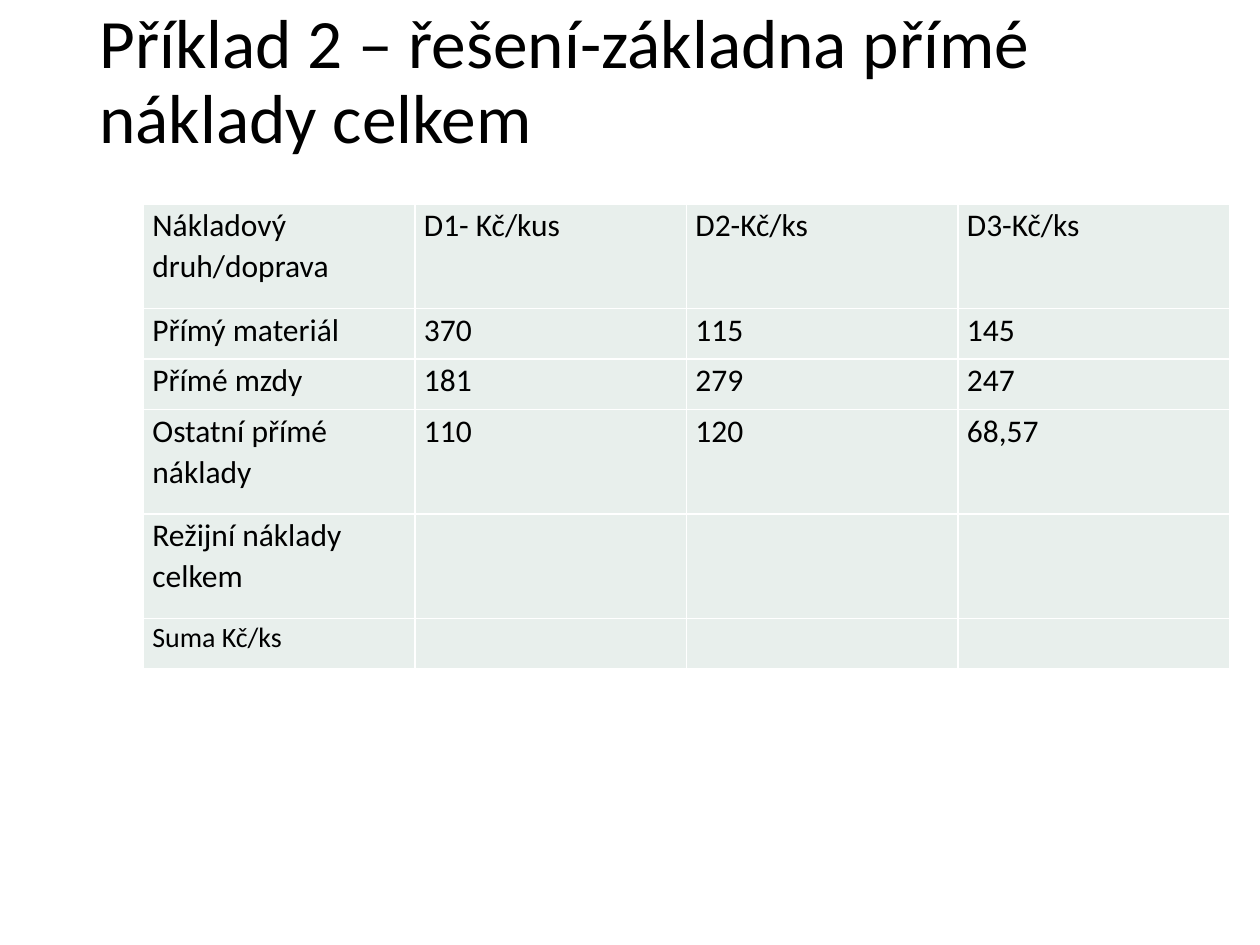
import pptx
import pptx.util
import pptx.dml.color
import pptx.enum.text
import pptx.oxml.ns
import lxml.etree
from pptx.util import Inches

theme = {
    "font": "Calibri",
    "ink": pptx.dml.color.RGBColor.from_string("000000"),
    "cell": pptx.dml.color.RGBColor.from_string("E8EFEC"),
    "border": "FFFFFF",
    "title_size": pptx.util.Pt(39.6),
    "body_size": pptx.util.Pt(18),
    "total_size": pptx.util.Pt(16),
}


def write(paragraph, text, size, spacing):
    paragraph.line_spacing = spacing
    run = paragraph.add_run()
    run.text = text
    run.font.name = theme["font"]
    run.font.size = size
    run.font.bold = False
    run.font.color.rgb = theme["ink"]


def add_borders(cell):
    properties = cell._tc.get_or_add_tcPr()
    for position, side in enumerate(("a:lnL", "a:lnR", "a:lnT", "a:lnB")):
        line = lxml.etree.Element(pptx.oxml.ns.qn(side), w=str(pptx.util.Pt(1)))
        fill = lxml.etree.SubElement(line, pptx.oxml.ns.qn("a:solidFill"))
        lxml.etree.SubElement(fill, pptx.oxml.ns.qn("a:srgbClr"), val=theme["border"])
        properties.insert(position, line)


deck = pptx.Presentation()
deck.slide_width = Inches(10)
deck.slide_height = Inches(7.5)
slide = deck.slides.add_slide(deck.slide_layouts[6])

title = slide.shapes.add_textbox(Inches(0.69), Inches(0.4), Inches(9.08), Inches(0.52)).text_frame
title.word_wrap = True
title.vertical_anchor = pptx.enum.text.MSO_ANCHOR.MIDDLE
write(title.paragraphs[0], "Příklad 2 – řešení-základna přímé náklady celkem", theme["title_size"], 0.9)

costs = [
    (0.83, ["Nákladový druh/doprava", "D1- Kč/kus", "D2-Kč/ks", "D3-Kč/ks"]),
    (0.4, ["Přímý materiál", "370", "115", "145"]),
    (0.4, ["Přímé mzdy", "181", "279", "247"]),
    (0.83, ["Ostatní přímé náklady", "110", "120", "68,57"]),
    (0.83, ["Režijní náklady celkem", "", "", ""]),
    (0.4, ["Suma Kč/ks", "", "", ""]),
]
cost_table = slide.shapes.add_table(
    len(costs), 4, Inches(1.14), Inches(1.62), Inches(8.62), Inches(3.7)
).table
cost_table.first_row = False
cost_table.horz_banding = False
for column in cost_table.columns:
    column.width = Inches(2.155)

cell_format = {
    "margin_left": Inches(0.07),
    "margin_right": Inches(0.07),
    "margin_top": 0,
    "margin_bottom": 0,
}
for row_index, (height, labels) in enumerate(costs):
    cost_table.rows[row_index].height = Inches(height)
    size = theme["total_size"] if row_index == len(costs) - 1 else theme["body_size"]
    for column_index, label in enumerate(labels):
        cell = cost_table.cell(row_index, column_index)
        for attribute, value in cell_format.items():
            setattr(cell, attribute, value)
        cell.fill.solid()
        cell.fill.fore_color.rgb = theme["cell"]
        add_borders(cell)
        if label:
            write(cell.text_frame.paragraphs[0], label, size, 1.07)

deck.save("out.pptx")
